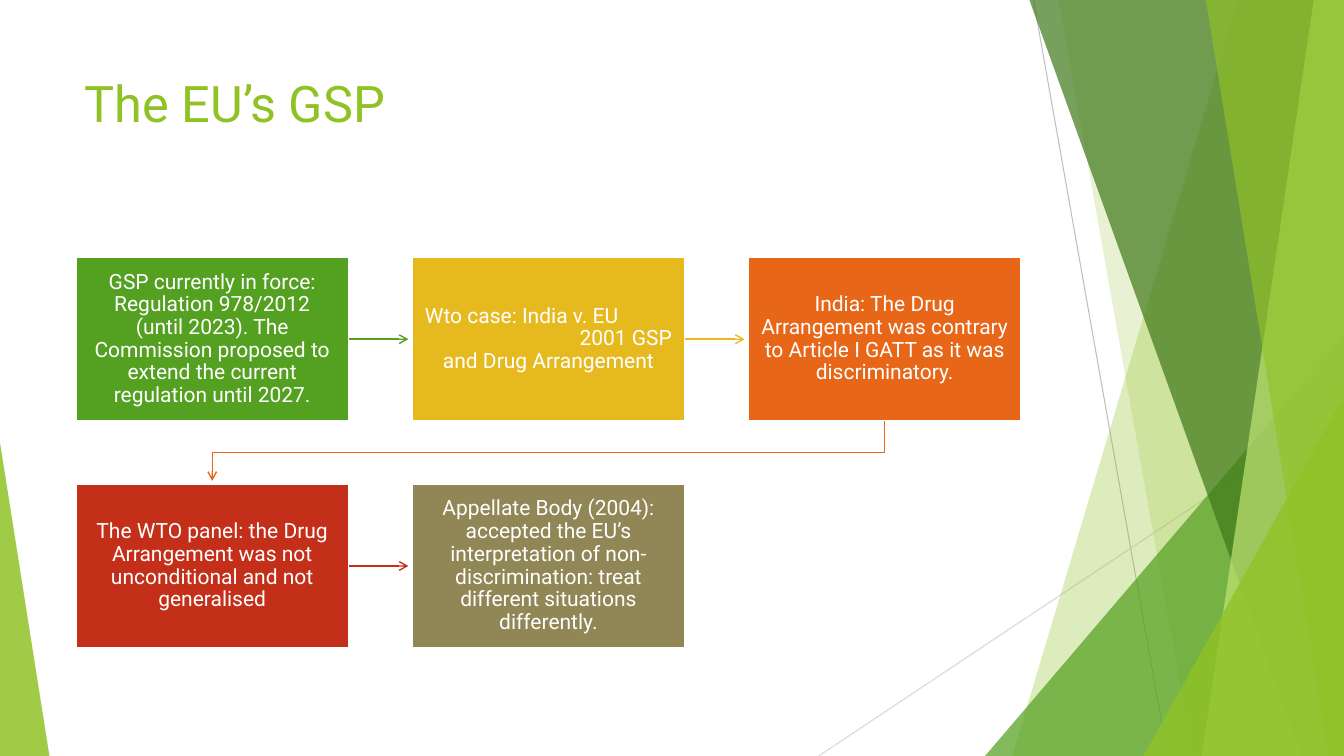
import pptx
import pptx.dml.color
import pptx.enum.shapes
import pptx.enum.text
import pptx.oxml.ns
import pptx.util
from lxml import etree

Inches, Pt = pptx.util.Inches, pptx.util.Pt
SHAPE = pptx.enum.shapes.MSO_SHAPE
ALIGN = pptx.enum.text.PP_ALIGN
ANCHOR = pptx.enum.text.MSO_ANCHOR
qn = pptx.oxml.ns.qn
rgb = pptx.dml.color.RGBColor.from_string

W, H = 13.33, 7.5
FONT = "Roboto"
LIME, GREEN, YELLOW = "90C226", "54A021", "E6B91E"
ORANGE, RED, OLIVE = "E76618", "C42F1A", "918655"

prs = pptx.Presentation()
prs.slide_width, prs.slide_height = Inches(W), Inches(H)
s = prs.slides.add_slide(prs.slide_layouts[5])


def outline(points, close):
    """Add a freeform through points given in inches."""
    pts = [(Inches(x), Inches(y)) for x, y in points]
    fb = s.shapes.build_freeform(*pts[0], scale=1.0)
    fb.add_line_segments(pts[1:], close=close)
    sp = fb.convert_to_shape()
    sp.shadow.inherit = False
    return sp


def style_line(sp, color, width, arrow=False):
    sp.line.color.rgb = rgb(color)
    sp.line.width = Pt(width)
    if arrow:
        etree.SubElement(sp.line._get_or_add_ln(), qn("a:tailEnd"), type="arrow")


# Thin background lines
for x1, y1, x2, y2, color in [
    (10.25, 0, 11.58, H, "BFBFBF"),
    (W, 4.03, 8.12, H, "D9D9D9"),
]:
    ln = s.shapes.add_connector(pptx.enum.shapes.MSO_CONNECTOR.STRAIGHT,
                                Inches(x1), Inches(y1), Inches(x2), Inches(y2))
    style_line(ln, color, 0.75)
    etree.SubElement(ln._element.spPr, qn("a:effectLst"))

# Translucent facets: bands give top and bottom x, triangles left, top and apex
facets = [
    ("band", (12.28, 10.04), LIME, 30),
    ("band", (10.5, 11.83), LIME, 20),
    ("triangle", (9.77, 3.33, W - 9.77, 1), GREEN, 72),
    ("band", (10.21, 12.91), "3F7819", 70),
    ("band", (13.03, 11.92), "C0E474", 70),
    ("band", (11.96, 13.18), LIME, 65),
    ("triangle", (11.34, 3.93, W - 11.34, 1), LIME, 80),
    ("triangle", (0, 4.39, 0.49, 0), LIME, 85),
]
for kind, geometry, color, opacity in facets:
    if kind == "band":
        top_x, bottom_x = geometry
        sp = outline([(top_x, 0), (W, 0), (W, H), (bottom_x, H)], True)
    else:
        left, top, width, apex = geometry
        sp = s.shapes.add_shape(SHAPE.ISOSCELES_TRIANGLE, Inches(left),
                                Inches(top), Inches(width), Inches(H - top))
        sp.adjustments[0] = apex
        sp.shadow.inherit = False
    sp.fill.solid()
    sp.fill.fore_color.rgb = rgb(color)
    sp.line.fill.background()
    fill_color = sp._element.spPr.find(qn("a:solidFill")).find(qn("a:srgbClr"))
    etree.SubElement(fill_color, qn("a:alpha"), val=str(opacity * 1000))

# Title
title = s.shapes.title
title.left, title.top = Inches(0.74), Inches(0.67)
title.width, title.height = Inches(9.4), Inches(1.44)
tf = title.text_frame
tf.text = "The EU’s GSP"
tf.auto_size = pptx.enum.text.MSO_AUTO_SIZE.NONE
tf.vertical_anchor = ANCHOR.TOP
p = tf.paragraphs[0]
p.alignment = ALIGN.LEFT
p.font.name, p.font.size = FONT, Pt(36)
p.font.color.rgb = rgb(LIME)

# Steps, filled row by row on a three-column grid
LEFT, TOP, BOX_W, BOX_H = 0.75, 2.55, 2.71, 1.63
COL_STEP, ROW_STEP, COLS = 3.335, 2.25, 3
ARROW = 0.59
C = ALIGN.CENTER
steps = [
    (GREEN, [("GSP currently in force: Regulation 978/2012 (until 2023). The "
              "Commission proposed to extend the current regulation until 2027.", C)]),
    (YELLOW, [("Wto case: India v. EU", ALIGN.LEFT),
              ("2001 GSP", ALIGN.RIGHT),
              ("and Drug Arrangement", C)]),
    (ORANGE, [("India: The Drug Arrangement was contrary to Article I GATT "
               "as it was discriminatory.", C)]),
    (RED, [("The WTO panel: the Drug Arrangement was not unconditional "
            "and not generalised", C)]),
    (OLIVE, [("Appellate Body (2004): accepted the EU’s interpretation of "
              "non-discrimination: treat different situations differently.", C)]),
]
text_format = {
    "word_wrap": True, "vertical_anchor": ANCHOR.MIDDLE,
    "margin_left": Inches(0.13), "margin_right": Inches(0.13),
    "margin_top": Inches(0.14), "margin_bottom": Inches(0.14),
}
for i, (color, lines) in enumerate(steps):
    row, col = divmod(i, COLS)
    x, y = LEFT + col * COL_STEP, TOP + row * ROW_STEP
    box = s.shapes.add_shape(SHAPE.RECTANGLE, Inches(x), Inches(y),
                             Inches(BOX_W), Inches(BOX_H))
    box.shadow.inherit = False
    box.fill.solid()
    box.fill.fore_color.rgb = rgb(color)
    style_line(box, "FFFFFF", 1.5)
    tf = box.text_frame
    for name, value in text_format.items():
        setattr(tf, name, value)
    for n, (text, align) in enumerate(lines):
        p = tf.add_paragraph() if n else tf.paragraphs[0]
        p.text = text
        p.alignment, p.line_spacing = align, 0.9
        p.font.name, p.font.size = FONT, Pt(15)
        p.font.color.rgb = rgb("FFFFFF")

    if i == len(steps) - 1:
        continue
    if col < COLS - 1:
        right, mid = x + BOX_W, y + BOX_H / 2
        arrow = s.shapes.add_connector(pptx.enum.shapes.MSO_CONNECTOR.STRAIGHT,
                                       Inches(right), Inches(mid),
                                       Inches(right + ARROW), Inches(mid))
        arrow.begin_connect(box, 3)
        etree.SubElement(arrow._element.spPr, qn("a:effectLst"))
    else:
        start_x, end_x = x + BOX_W / 2, LEFT + BOX_W / 2
        bottom = y + BOX_H
        turn = bottom + (ROW_STEP - BOX_H) / 2
        arrow = outline([(start_x, bottom), (start_x, turn), (end_x, turn),
                         (end_x, bottom + ARROW)], False)
        arrow.fill.background()
    style_line(arrow, color, 1, arrow=True)

prs.save("out.pptx")
